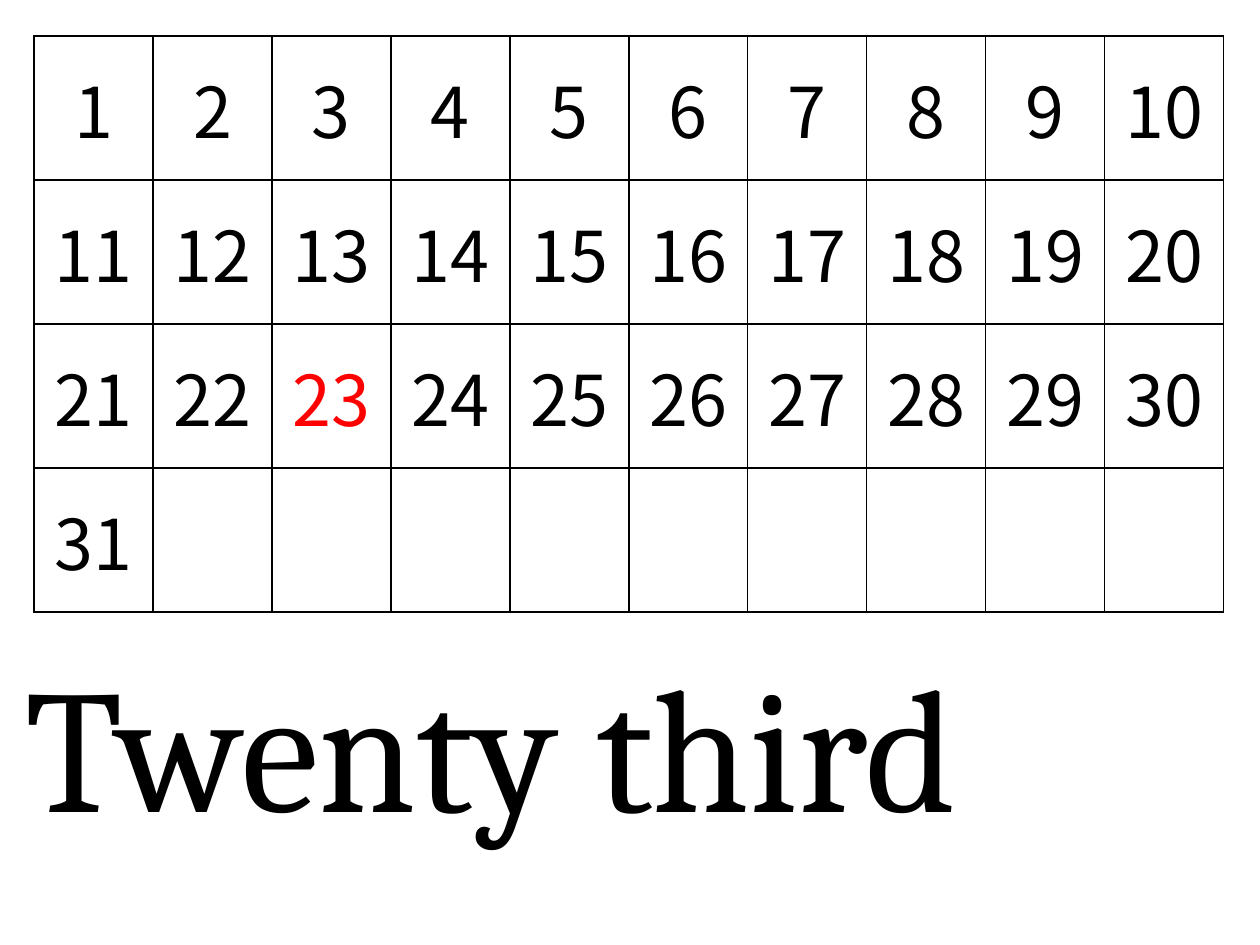
from lxml import etree
from pptx import Presentation
from pptx.dml.color import RGBColor
from pptx.enum.text import MSO_ANCHOR, MSO_AUTO_SIZE, PP_ALIGN
from pptx.oxml.ns import qn
from pptx.util import Emu, Pt

MIDDLE = MSO_ANCHOR.MIDDLE
CENTER = PP_ALIGN.CENTER
GROW = MSO_AUTO_SIZE.SHAPE_TO_FIT_TEXT

EMU_PER_PX = 914400 // 126
BLACK, RED = "000000", "FF0000"
ROWS, COLS = 4, 10
LAST_DAY, MARKED_DAY = 31, 23
COL_WIDTH, ROW_HEIGHT = 119, 144
BORDER_PT = 1

DAY_FORMAT = {"name": "Noto Sans CJK JP", "size": Pt(40)}
WORD_FORMAT = {"name": "Cambria", "size": Pt(100)}


def px(length):
    return Emu(length * EMU_PER_PX)


def color(hex_value):
    return RGBColor.from_string(hex_value)


def write(para, text, font_format, hex_value):
    span = para.add_run()
    span.text = text
    for name, value in font_format.items():
        setattr(span.font, name, value)
    span.font.color.rgb = color(hex_value)


def add_borders(cell):
    properties = cell._tc.get_or_add_tcPr()
    # Borders come before the fill in the cell properties
    for index, side in enumerate(("a:lnL", "a:lnR", "a:lnT", "a:lnB")):
        line = etree.Element(qn(side), w=str(Pt(BORDER_PT)))
        fill = etree.SubElement(line, qn("a:solidFill"))
        etree.SubElement(fill, qn("a:srgbClr"), val=BLACK)
        properties.insert(index, line)


def add_calendar(page, left, top):
    frame = page.shapes.add_table(ROWS, COLS, px(left), px(top),
                                  px(COLS * COL_WIDTH), px(ROWS * ROW_HEIGHT))
    table = frame.table
    table.first_row = False
    table.horz_banding = False
    for column in table.columns:
        column.width = px(COL_WIDTH)
    for row in table.rows:
        row.height = px(ROW_HEIGHT)

    for day, cell in enumerate(table.iter_cells(), start=1):
        cell.fill.background()
        add_borders(cell)
        if day <= LAST_DAY:
            cell.vertical_anchor = MIDDLE
            para = cell.text_frame.paragraphs[0]
            para.alignment = CENTER
            write(para, str(day), DAY_FORMAT, RED if day == MARKED_DAY else BLACK)


def add_word(page, text, left, top, width, height):
    box = page.shapes.add_textbox(px(left), px(top), px(width), px(height))
    box.text_frame.word_wrap = False
    box.text_frame.auto_size = GROW
    write(box.text_frame.paragraphs[0], text, WORD_FORMAT, BLACK)


def main():
    deck = Presentation()
    deck.slide_width, deck.slide_height = px(1260), px(945)
    page = deck.slides.add_slide(deck.slide_layouts[6])

    # Days of the month
    add_calendar(page, 34, 36)

    # The marked day in words
    add_word(page, "Twenty third", 13, 631, 1102, 224)

    deck.save("out.pptx")


if __name__ == "__main__":
    main()
